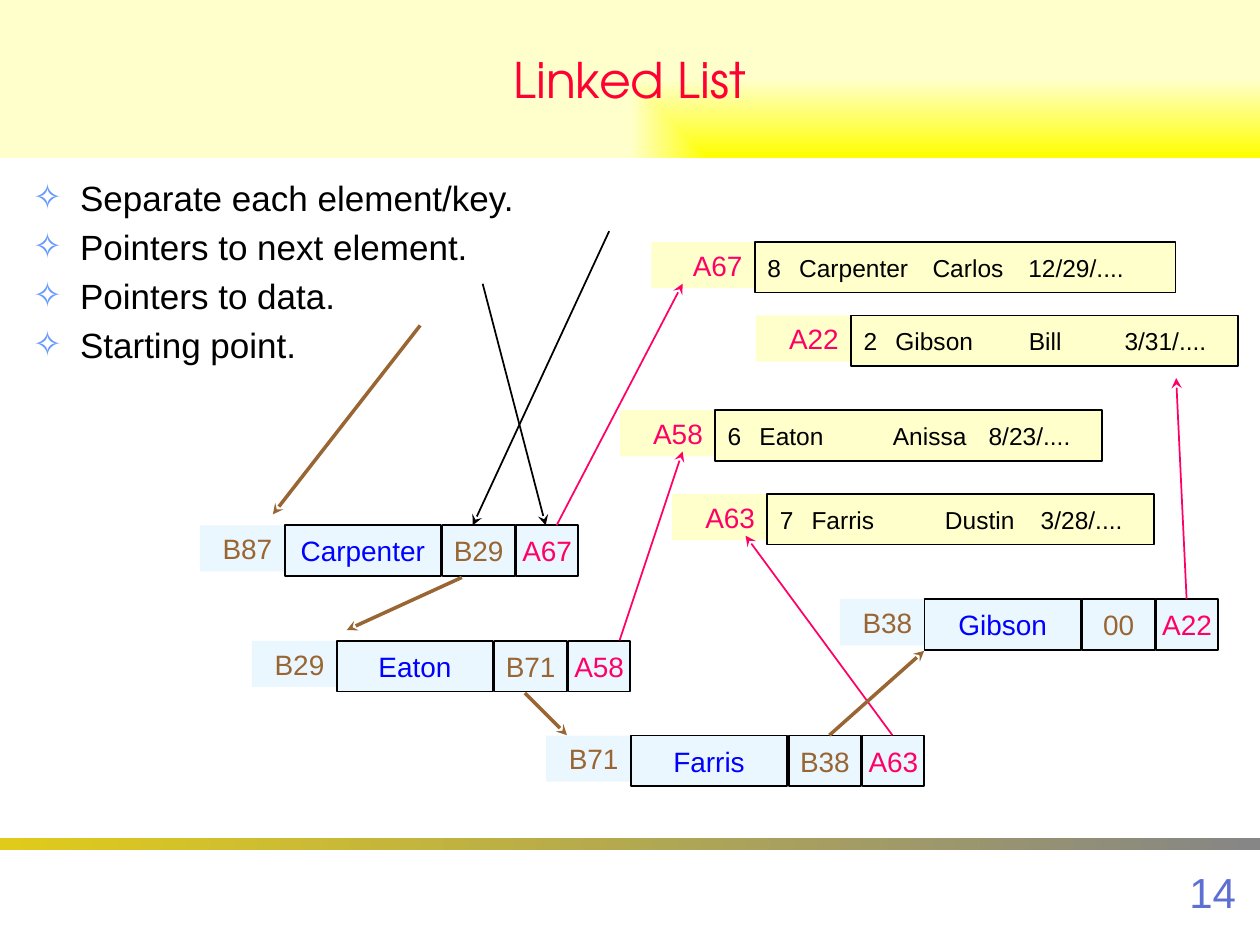
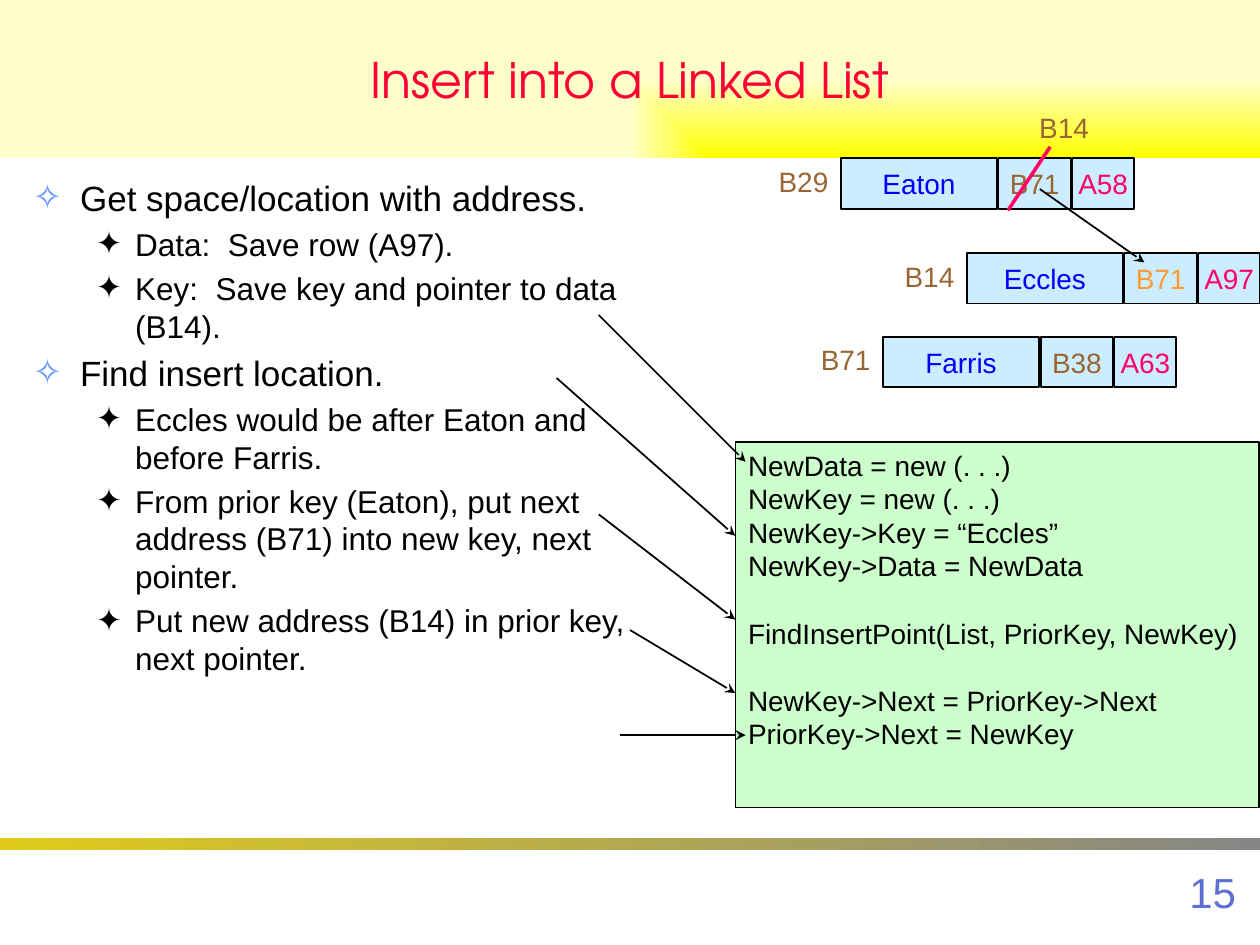
import pptx
import pptx.dml.color
import pptx.enum.shapes
import pptx.enum.text
import pptx.oxml
import pptx.oxml.ns
import pptx.util
from lxml import etree

Cm, Pt = pptx.util.Cm, pptx.util.Pt
ALIGN = pptx.enum.text.PP_ALIGN
ANCHOR = pptx.enum.text.MSO_ANCHOR
RECT = pptx.enum.shapes.MSO_SHAPE.RECTANGLE
STRAIGHT = pptx.enum.shapes.MSO_CONNECTOR.STRAIGHT

BLACK, KEY_BLUE, BROWN, PINK = "000000", "0000FF", "996633", "FF0066"
RECORD_FILL, CODE_FILL = "FFFFCC", "CCFFCC"


def rgb(value):
    return pptx.dml.color.RGBColor.from_string(value)


def add_xml(parent, tag, **attributes):
    """Append a drawing element and return it."""
    child = etree.SubElement(parent, pptx.oxml.ns.qn(tag))
    for key, value in attributes.items():
        child.set(key, str(value))
    return child


def write(paragraph, text, size=16, color=BLACK, font="Arial", align=None, before=0):
    """Put one formatted run into a paragraph."""
    run = paragraph.add_run()
    run.text = text
    run.font.size, run.font.name = Pt(size), font
    run.font.color.rgb = rgb(color)
    paragraph.alignment = align
    paragraph.space_before = Pt(before)


class Deck:
    # Bullet levels: left margin, hanging indent, size, sign, sign colour
    LEVELS = [(0.95, 0.95, 20, "✧", "6699FF"), (2.06, 0.79, 18, "✦", BLACK)]
    # Node cells: offset from the label, width
    CELLS = [(1.71, 3.15), (4.89, 1.46), (6.38, 1.24)]
    CELL_HEIGHT, LABEL_HEIGHT = 1.02, 0.93
    RECORD_TABS = (0.64, 3.33, 5.26)

    def __init__(self):
        self.presentation = pptx.Presentation()
        self.presentation.slide_width = Cm(25.4)
        self.presentation.slide_height = Cm(19.05)
        self.slide = None

    def start_slide(self, title, number, bullets, body_width):
        layout = self.presentation.slide_layouts[1]
        self.slide = self.presentation.slides.add_slide(layout)
        self.title_band(title)
        self.bullet_list(bullets, body_width)
        # Footer rule and page number
        rule = self.box(0, 16.89, 25.4, 0.25)
        self.gradient(rule, "E0CB1B", "868686")
        page = self.box(19.89, 17.35, 5.28, 1.27)
        write(page.text_frame.paragraphs[0], number, size=24, color="5E6FD4",
              align=ALIGN.RIGHT)

    def place(self, shape, left, top, width, height):
        shape.left, shape.top = Cm(left), Cm(top)
        shape.width, shape.height = Cm(width), Cm(height)

    def gradient(self, shape, first, last):
        shape.fill.gradient()
        shape.fill.gradient_angle = 0
        for stop, color in zip(shape.fill.gradient_stops, (first, last)):
            stop.color.rgb = rgb(color)

    def title_band(self, title):
        band = self.slide.shapes.title
        self.place(band, 0, 0, 25.4, 3.18)
        self.gradient(band, "FFFF00", "FFFFCC")
        # The gradient spreads from the lower right corner
        grad = band._element.spPr.find(pptx.oxml.ns.qn("a:gradFill"))
        grad.remove(grad.find(pptx.oxml.ns.qn("a:lin")))
        spread = add_xml(grad, "a:path", path="rect")
        add_xml(spread, "a:fillToRect", l=100000, t=100000)
        frame = band.text_frame
        frame.auto_size = pptx.enum.text.MSO_AUTO_SIZE.NONE
        frame.vertical_anchor = ANCHOR.MIDDLE
        write(frame.paragraphs[0], title, size=28, color="FF0033",
              font="TeX Gyre Adventor", align=ALIGN.CENTER)

    def bullet_list(self, bullets, width):
        body = self.slide.placeholders[1]
        self.place(body, 0.41, 3.43, width, 13.28)
        frame = body.text_frame
        frame.auto_size = pptx.enum.text.MSO_AUTO_SIZE.NONE
        for index, (level, text) in enumerate(bullets):
            paragraph = frame.add_paragraph() if index else frame.paragraphs[0]
            margin, hanging, size, sign, sign_color = self.LEVELS[level]
            paragraph.level = level
            write(paragraph, text, size=size, before=size * 0.2)
            properties = paragraph._p.get_or_add_pPr()
            properties.set("marL", str(Cm(margin)))
            properties.set("indent", str(-Cm(hanging)))
            add_xml(add_xml(properties, "a:buClr"), "a:srgbClr", val=sign_color)
            add_xml(properties, "a:buChar", char=sign)

    def box(self, left, top, width, height, fill=None, line=None,
            anchor=ANCHOR.MIDDLE, wrap=True):
        shape = self.slide.shapes.add_shape(
            RECT, Cm(left), Cm(top), Cm(width), Cm(height))
        shape.shadow.inherit = False
        if fill:
            shape.fill.solid()
            shape.fill.fore_color.rgb = rgb(fill)
        else:
            shape.fill.background()
        if line:
            shape.line.color.rgb = rgb(line)
            shape.line.width = Pt(1)
        else:
            shape.line.fill.background()
        shape.text_frame.vertical_anchor = anchor
        shape.text_frame.word_wrap = wrap
        return shape

    def label(self, left, top, width, text, color, fill=None, align=ALIGN.RIGHT):
        tag = self.box(left, top, width, self.LABEL_HEIGHT, fill, anchor=ANCHOR.TOP)
        write(tag.text_frame.paragraphs[0], text, color=color, align=align)

    def node(self, left, top, address, key, next_address, data_address,
             fill, label_fill=None, next_color=BROWN):
        """One list element: address label, key, next pointer, data pointer."""
        self.label(left, top, self.CELLS[0][0], address, BROWN, label_fill)
        contents = [(key, KEY_BLUE), (next_address, next_color), (data_address, PINK)]
        for (offset, width), (text, color) in zip(self.CELLS, contents):
            cell = self.box(left + offset, top, width, self.CELL_HEIGHT,
                            fill, BLACK, wrap=False)
            write(cell.text_frame.paragraphs[0], text, color=color, align=ALIGN.CENTER)

    def record(self, left, top, label_width, width, address, *fields):
        """One data row with its address label."""
        self.label(left, top, label_width, address, PINK, RECORD_FILL)
        row = self.box(left + label_width, top, width, self.CELL_HEIGHT,
                       RECORD_FILL, BLACK)
        paragraph = row.text_frame.paragraphs[0]
        write(paragraph, "\t".join(fields), size=14, align=ALIGN.LEFT)
        stops = add_xml(paragraph._p.get_or_add_pPr(), "a:tabLst")
        for position in self.RECORD_TABS:
            add_xml(stops, "a:tab", pos=Cm(position), algn="l")

    def code(self, left, top, width, height, blocks):
        """Code listing; the blocks are set one line apart."""
        panel = self.box(left, top, width, height, CODE_FILL, BLACK, ANCHOR.TOP)
        frame = panel.text_frame
        paragraph = frame.paragraphs[0]
        for block_index, block in enumerate(blocks):
            for line_index, text in enumerate(block):
                if block_index or line_index:
                    paragraph = frame.add_paragraph()
                gap = 19.2 if block_index and not line_index else 0
                write(paragraph, text, align=ALIGN.LEFT, before=gap)

    def line(self, x1, y1, x2, y2, color=BLACK, weight=1, arrow=True):
        link = self.slide.shapes.add_connector(
            STRAIGHT, Cm(x1), Cm(y1), Cm(x2), Cm(y2))
        link.line.width = Pt(weight)
        link.line.color.rgb = rgb(color)
        if arrow:
            add_xml(link.line._get_or_add_ln(), "a:tailEnd", type="stealth")
        add_xml(link._element.spPr, "a:effectLst")


def linked_list(deck):
    deck.start_slide("Linked List", "14", [
        (0, "Separate each element/key."),
        (0, "Pointers to next element."),
        (0, "Pointers to data."),
        (0, "Starting point."),
    ], 24.59)

    # List elements
    for element in [
        (4.03, 10.59, "B87", "Carpenter", "B29", "A67"),
        (16.93, 12.08, "B38", "Gibson", "00", "A22"),
        (5.08, 12.92, "B29", "Eaton", "B71", "A58"),
        (11.01, 14.83, "B71", "Farris", "B38", "A63"),
    ]:
        deck.node(*element, fill="EBF7FF", label_fill="EBF7FF")

    # Data rows
    deck.record(13.55, 9.96, 1.92, 7.8, "A63", "7", "Farris", "Dustin", "3/28/....")
    deck.record(13.13, 4.88, 2.09, 8.48, "A67", "8", "Carpenter", "Carlos", "12/29/....")
    deck.record(12.5, 8.27, 1.92, 7.8, "A58", "6", "Eaton", "Anissa", "8/23/....")
    deck.record(15.24, 6.36, 1.92, 7.8, "A22", "2", "Gibson", "Bill", "3/31/....")

    # Pointers to data, pointers to the next element, links from the bullets
    data_pointers = [(11.22, 10.59, 13.76, 5.72), (17.99, 14.82, 15.03, 10.8),
                     (12.49, 12.91, 13.76, 9.1), (23.92, 12.07, 23.71, 7.62)]
    next_pointers = [(9.31, 11.64, 6.99, 12.7), (10.58, 13.97, 11.43, 14.82),
                     (16.72, 14.82, 18.63, 13.12), (8.47, 6.56, 5.5, 10.37)]
    bullet_links = [(12.28, 4.66, 9.53, 10.59), (9.73, 5.72, 11, 10.59)]
    for pointers, color, weight in [(data_pointers, PINK, 1), (next_pointers, BROWN, 2),
                                    (bullet_links, BLACK, 1)]:
        for ends in pointers:
            deck.line(*ends, color=color, weight=weight)


def insert_into_list(deck):
    deck.start_slide("Insert into a Linked List", "15", [
        (0, "Get space/location with address."),
        (1, "Data:  Save row (A97)."),
        (1, "Key:  Save key and pointer to data (B14)."),
        (0, "Find insert location."),
        (1, "Eccles would be after Eaton and before Farris."),
        (1, "From prior key (Eaton), put next address (B71) into new key, "
            "next pointer."),
        (1, "Put new address (B14) in prior key, next pointer."),
    ], 13.34)

    # List elements, with the new one in the middle
    fill = "CCECFF"
    deck.node(16.09, 6.79, "B71", "Farris", "B38", "A63", fill)
    deck.node(15.24, 3.19, "B29", "Eaton", "B71", "A58", fill)
    deck.node(17.78, 5.1, "B14", "Eccles", "B71", "A97", fill, next_color="FF9933")

    deck.code(14.83, 8.91, 10.55, 7.37, [
        ["NewData = new (. . .)", "NewKey = new (. . .)",
         "NewKey->Key = “Eccles”", "NewKey->Data = NewData"],
        ["FindInsertPoint(List, PriorKey, NewKey)"],
        ["NewKey->Next = PriorKey->Next", "PriorKey->Next = NewKey"],
    ])

    # Replaced pointer
    deck.line(20.32, 4.24, 21.17, 2.96, color=PINK, weight=2, arrow=False)
    deck.label(20.7, 2.11, 1.53, "B14", BROWN, align=ALIGN.LEFT)
    deck.line(20.96, 3.81, 23.07, 5.29)

    # Links from the steps to the code
    for ends in [(12.07, 6.35, 15.03, 9.31), (11.22, 7.62, 14.82, 10.8),
                 (12.07, 10.37, 14.82, 12.49), (12.7, 12.7, 14.82, 13.97),
                 (12.49, 14.82, 15.03, 14.82)]:
        deck.line(*ends)


def main():
    deck = Deck()
    linked_list(deck)
    insert_into_list(deck)
    deck.presentation.save("out.pptx")


if __name__ == "__main__":
    main()
